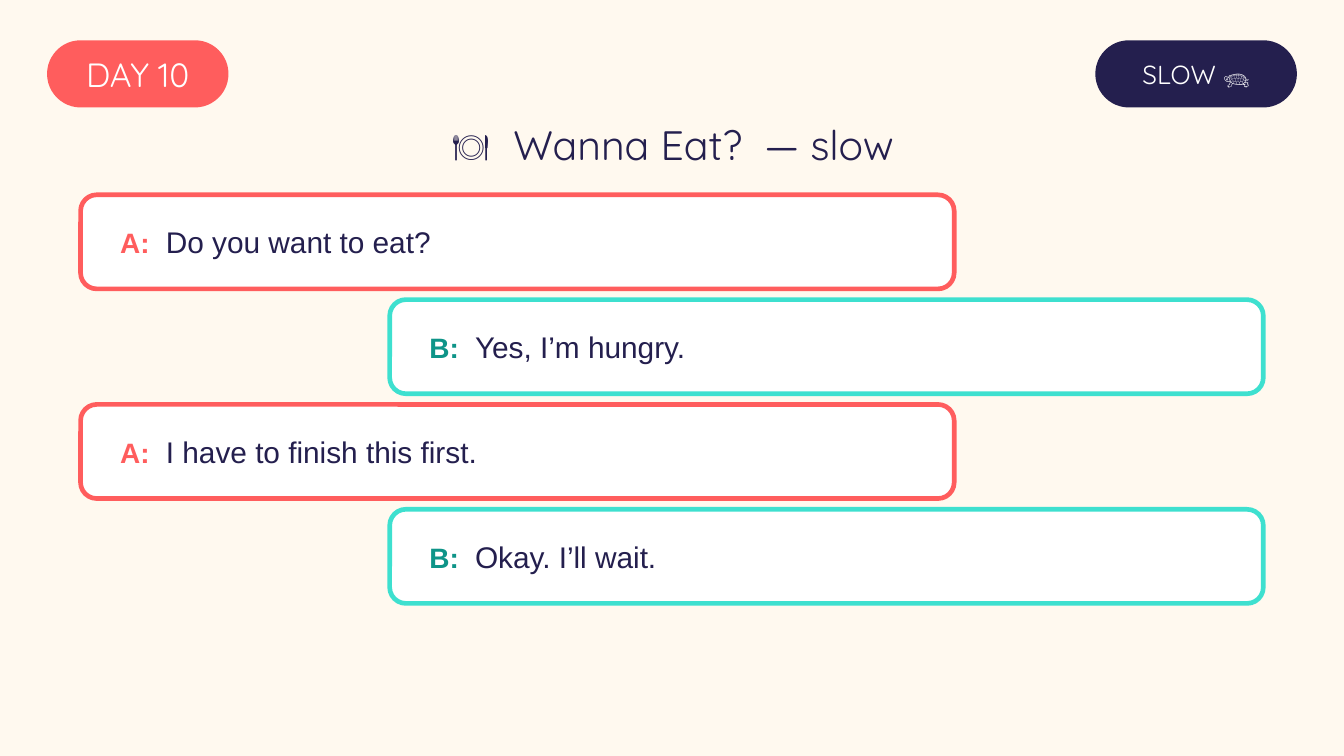
from pptx import Presentation
from pptx.dml.color import RGBColor
from pptx.enum import shapes, text
from pptx.oxml import parse_xml
from pptx.oxml.ns import nsdecls
from pptx.util import Inches, Pt

TITLE = "🍽️  Wanna Eat?  — slow"
# label, left, width, fill, type size
PILLS = [
    ("DAY 10", 0.35, 1.35, "coral", "day"),
    ("SLOW 🐢", 8.15, 1.5, "navy", "pace"),
]
LINES = [
    ("A", "Do you want to eat?"),
    ("B", "Yes, I’m hungry."),
    ("A", "I have to finish this first."),
    ("B", "Okay. I’ll wait."),
]
# left edge, outline, label colour
VOICES = {"A": (0.6, "coral", "coral"), "B": (2.9, "aqua", "teal")}

THEME = {
    "color": {"cream": "FFF9EF", "white": "FFFFFF", "navy": "241F4E",
              "coral": "FF5D5D", "aqua": "3EE0CF", "teal": "0E9488"},
    "size": {"title": 22, "day": 18, "pace": 14, "label": 15, "line": 16},
    "head": "Quicksand",
    "body": "Arial",
}
PAGE = 10
TOP, WIDE, HIGH, GAP = 1.45, 6.5, 0.7, 0.08
RADIUS = 0.12
PAD, TAB = 0.26, 0.34


def rgb(name):
    return RGBColor.from_string(THEME["color"][name])


def style(run, size, color, face, bold=False):
    font = run.font
    font.name, font.bold = THEME[face], bold
    font.size = Pt(THEME["size"][size])
    font.color.rgb = rgb(color)


def center(shape, words, size, color):
    """Set one centred line of heading text in a shape."""
    frame = shape.text_frame
    frame.text = words
    frame.auto_size = text.MSO_AUTO_SIZE.NONE
    frame.vertical_anchor = text.MSO_ANCHOR.MIDDLE
    para = frame.paragraphs[0]
    para.alignment = text.PP_ALIGN.CENTER
    style(para.runs[0], size, color, "head")


def panel(slide, box, fill, round_by):
    shape = slide.shapes.add_shape(
        shapes.MSO_SHAPE.ROUNDED_RECTANGLE, *map(Inches, box))
    shape.shadow.inherit = False
    shape.adjustments[0] = round_by
    shape.fill.solid()
    shape.fill.fore_color.rgb = rgb(fill)
    shape.line.fill.background()
    return shape


def pill(slide, words, left, width, fill, size):
    shape = panel(slide, (left, 0.3, width, 0.5), fill, 0.5)
    frame = shape.text_frame
    frame.margin_left = frame.margin_right = 0
    frame.margin_top = frame.margin_bottom = 0
    center(shape, words, size, "white")


def bubble(slide, row, voice, words):
    left, edge, tint = VOICES[voice]
    top = TOP + row * (HIGH + GAP)
    shape = panel(slide, (left, top, WIDE, HIGH), "white", RADIUS / HIGH)
    shape.line.color.rgb = rgb(edge)
    shape.line.width = Pt(2.5)
    frame = shape.text_frame
    frame.word_wrap = True
    frame.margin_left = Inches(PAD)
    frame.vertical_anchor = text.MSO_ANCHOR.MIDDLE
    para = frame.paragraphs[0]
    para.alignment = text.PP_ALIGN.LEFT
    para._p.get_or_add_pPr().append(parse_xml(
        f'<a:tabLst {nsdecls("a")}><a:tab pos="{Inches(TAB)}" algn="l"/></a:tabLst>'))
    label, speech = para.add_run(), para.add_run()
    label.text, speech.text = f"{voice}:\t", words
    style(label, "label", tint, "body", bold=True)
    style(speech, "line", "navy", "body")


def main():
    deck = Presentation()
    deck.slide_width, deck.slide_height = Inches(PAGE), Inches(PAGE * 9 / 16)
    slide = deck.slides.add_slide(deck.slide_layouts[5])
    back = slide.background.fill
    back.solid()
    back.fore_color.rgb = rgb("cream")

    title = slide.shapes.title
    title.left, title.top = Inches(0), Inches(0.82)
    title.width, title.height = Inches(PAGE), Inches(0.5)
    center(title, TITLE, "title", "navy")

    for item in PILLS:
        pill(slide, *item)
    for row, (voice, words) in enumerate(LINES):
        bubble(slide, row, voice, words)
    deck.save("out.pptx")


if __name__ == "__main__":
    main()
